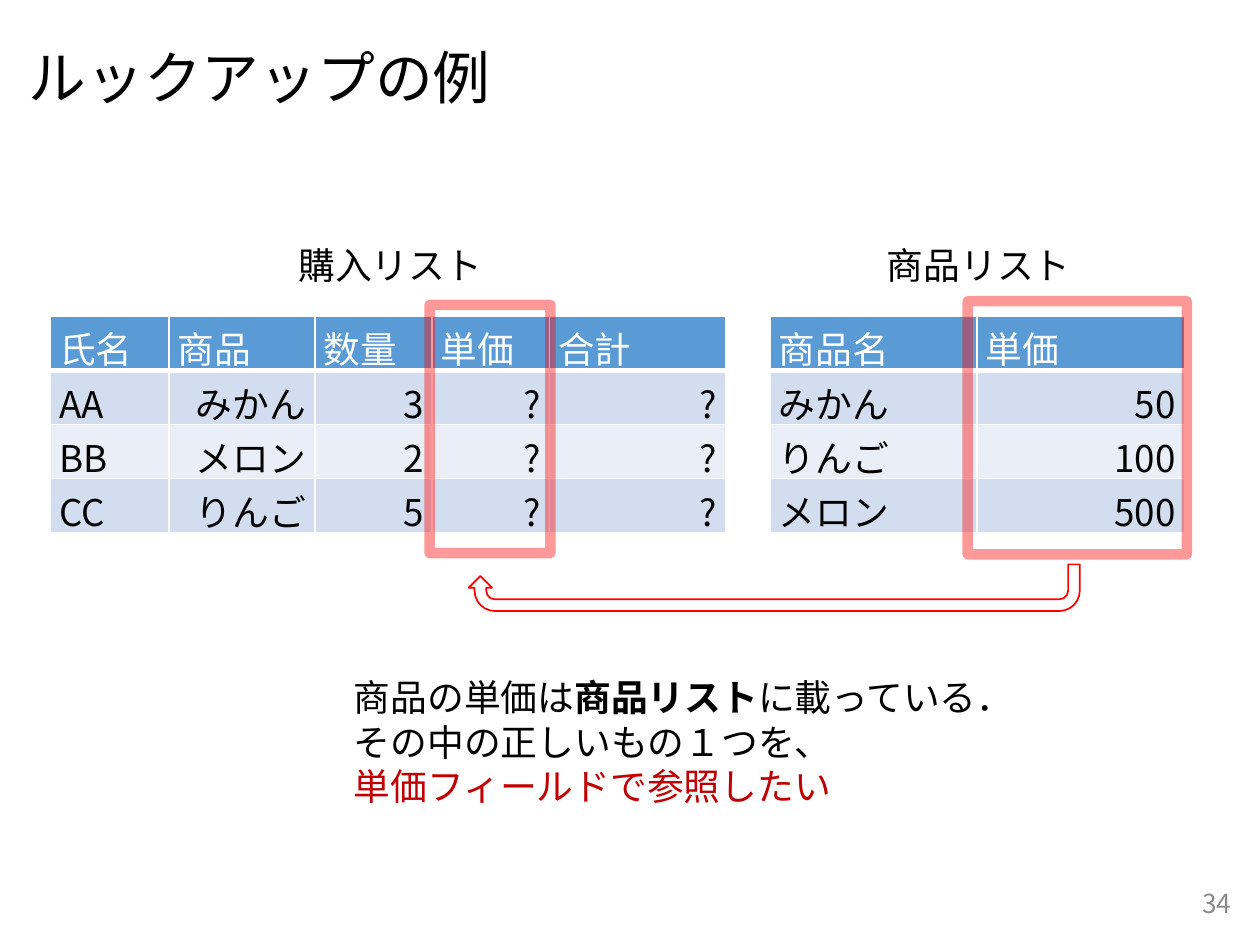
from lxml.etree import SubElement
from pptx import Presentation
from pptx.dml.color import RGBColor
from pptx.enum.shapes import MSO_SHAPE
from pptx.enum.text import MSO_ANCHOR, PP_ALIGN
from pptx.oxml.ns import qn
from pptx.util import Inches, Pt

COLS, ROWS = 100, 75
BLACK, WHITE, RED = "000000", "FFFFFF", "FF0000"
HEADER, BANDS = "5B9BD5", ("D2DEEF", "EAEFF7")


def rgb(value):
    """Turn a hex string into a colour."""
    return RGBColor.from_string(value)


class Deck:
    """Holds the style and the current slide, placed on a 100 by 75 grid."""

    font, size = "Noto Sans CJK JP", 21

    def __init__(self):
        """Open a presentation with one blank slide."""
        self.prs = Presentation()
        self.prs.slide_width, self.prs.slide_height = Inches(10), Inches(7.5)
        self.s = self.prs.slides.add_slide(self.prs.slide_layouts[6])

    def x(self, cols):
        """Convert grid columns to a length."""
        return round(self.prs.slide_width * cols / COLS)

    def y(self, rows):
        """Convert grid rows to a length."""
        return round(self.prs.slide_height * rows / ROWS)

    def box(self, left, top, width, height):
        """Convert a grid rectangle to lengths."""
        return self.x(left), self.y(top), self.x(width), self.y(height)

    def style(self, r, color=BLACK, size=None, font=None, bold=False):
        """Format one run."""
        r.font.name, r.font.size = font or self.font, Pt(size or self.size)
        r.font.color.rgb, r.font.bold = rgb(color), bold
        for tag in ("a:ea", "a:cs"):
            SubElement(r._r.get_or_add_rPr(), qn(tag), typeface=font or self.font)

    def text(self, at, paragraphs, wrap=False, anchor=MSO_ANCHOR.TOP,
             align=PP_ALIGN.LEFT, spacing=None):
        """Add a text box from paragraphs of (text, style) runs."""
        tf = self.s.shapes.add_textbox(*self.box(*at)).text_frame
        tf.word_wrap, tf.vertical_anchor = wrap, anchor
        for i, runs in enumerate(paragraphs):
            p = tf.add_paragraph() if i else tf.paragraphs[0]
            p.alignment, p.line_spacing = align, spacing
            for words, look in runs:
                r = p.add_run()
                r.text = words
                self.style(r, **look)

    def table(self, at, widths, row_height, data, left_columns=1):
        """Add a banded table whose later columns are right-aligned."""
        size = sum(widths), row_height * len(data)
        table = self.s.shapes.add_table(
            len(data), len(widths), *self.box(*at, *size)).table
        for column, width in zip(table.columns, widths):
            column.width = self.x(width)
        for i, values in enumerate(data):
            table.rows[i].height = self.y(row_height)
            for j, value in enumerate(values):
                self.cell(table.cell(i, j), value, i, j >= left_columns)

    def cell(self, cell, value, row, right):
        """Fill and format one table cell."""
        cell.margin_left = cell.margin_right = Inches(0.07)
        cell.margin_top = cell.margin_bottom = Inches(0.04)
        cell.text = value
        p = cell.text_frame.paragraphs[0]
        p.alignment = PP_ALIGN.RIGHT if row and right else PP_ALIGN.LEFT
        self.style(p.runs[0], BLACK if row else WHITE)
        for side in "LRTB":
            width = 3 if side == "B" and not row else 1
            ln = SubElement(cell._tc.get_or_add_tcPr(), qn(f"a:ln{side}"), w=str(Pt(width)))
            SubElement(SubElement(ln, qn("a:solidFill")), qn("a:srgbClr"), val=WHITE)
        cell.fill.solid()
        cell.fill.fore_color.rgb = rgb(BANDS[(row - 1) % 2] if row else HEADER)

    def outline(self, kind, at, width, opacity=None):
        """Add an unfilled red shape."""
        sp = self.s.shapes.add_shape(kind, *self.box(*at))
        sp.shadow.inherit = False
        sp.fill.background()
        sp.line.color.rgb, sp.line.width = rgb(RED), Pt(width)
        if opacity:
            color = sp.line._ln.find(".//" + qn("a:srgbClr"))
            SubElement(color, qn("a:alpha"), val=str(opacity * 1000))
        return sp

    def return_arrow(self, at):
        """Add a U-turn arrow that runs below from right to left."""
        sp = self.outline(MSO_SHAPE.U_TURN_ARROW, at, 1)
        xfrm = sp._element.spPr.find(qn("a:xfrm"))
        for flip in ("flipH", "flipV"):
            xfrm.set(flip, "1")


def main():
    """Build the lookup example slide."""
    d = Deck()
    d.text((1.3, 2.1, 96.5, 8.6), [[("ルックアップの例", {"size": 33, "font": "Lato"})]],
           wrap=True, anchor=MSO_ANCHOR.MIDDLE, spacing=0.9)
    d.text((76.2, 69.7, 22.5, 4), [[("34", {"size": 15, "color": "8C8C8C"})]],
           wrap=True, anchor=MSO_ANCHOR.MIDDLE, align=PP_ALIGN.RIGHT)
    d.table((61.1, 25.1), (16.45, 16.45), 4.24,
            [("商品名", "単価"), ("みかん", "50"), ("りんご", "100"), ("メロン", "500")])
    d.table((4, 25.1), (9.4, 11.6, 9.3, 9.3, 14), 4.24,
            [("氏名", "商品", "数量", "単価", "合計"),
             ("AA", "みかん", "3", "?", "?"),
             ("BB", "メロン", "2", "?", "?"),
             ("CC", "りんご", "5", "?", "?")])
    for left, title in ((69.4, "商品リスト"), (22.7, "購入リスト")):
        d.text((left, 18.8, 16.7, 4.5), [[(title, {})]])
    d.text((27.1, 53.1, 55, 11.6), [
        [("商品の単価は", {}), ("商品リスト", {"bold": True}), ("に載っている．", {})],
        [("その中の正しいもの１つを、", {})],
        [("単価フィールドで参照したい", {"color": "C00000"})]])
    for at in ((76.8, 23.9, 17.4, 20.1), (34.1, 24.2, 9.6, 19.7)):
        d.outline(MSO_SHAPE.RECTANGLE, at, 6, opacity=40)
    d.return_arrow((37.2, 44.8, 48.5, 3.7))
    d.prs.save("out.pptx")


if __name__ == "__main__":
    main()
